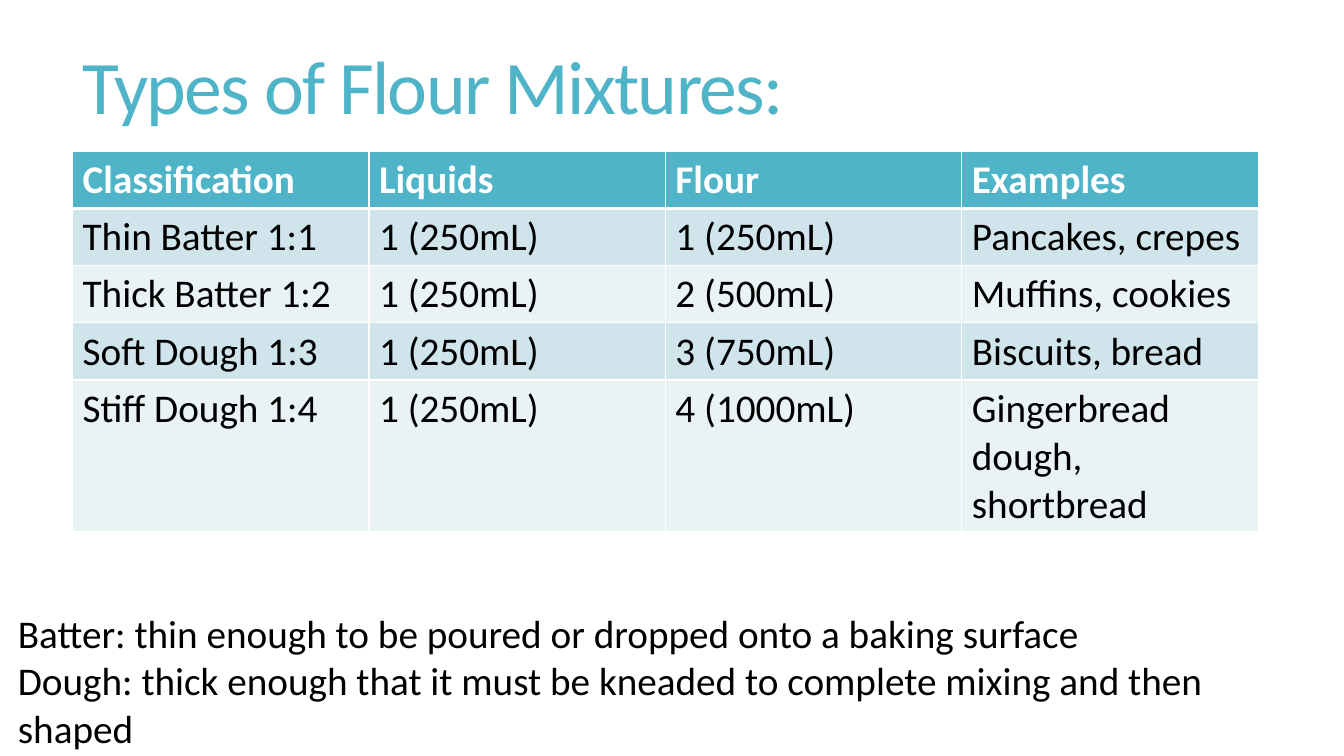
from dataclasses import dataclass

from lxml.etree import SubElement
from pptx import Presentation
from pptx.dml.color import RGBColor as Rgb
from pptx.enum.text import MSO_ANCHOR as Anchor
from pptx.oxml.ns import qn
from pptx.util import Inches, Pt


@dataclass(frozen=True)
class Theme:
    font: str = "Calibri"
    accent: str = "50B4C8"
    bands: tuple = ("D0E5EB", "E9F2F5")
    ink: str = "000000"
    paper: str = "FFFFFF"
    title_size: int = 54
    body_size: int = 28
    rule: int = 1
    header_rule: int = 3


THEME = Theme()
WIDTH, HEIGHT = Inches(13.33), Inches(7.5)

HEADING = "Types of Flour Mixtures:"
MIXTURES = [
    ("Classification", "Liquids", "Flour", "Examples"),
    ("Thin Batter 1:1", "1 (250mL)", "1 (250mL)", "Pancakes, crepes"),
    ("Thick Batter 1:2", "1 (250mL)", "2 (500mL)", "Muffins, cookies"),
    ("Soft Dough 1:3", "1 (250mL)", "3 (750mL)", "Biscuits, bread"),
    ("Stiff Dough 1:4", "1 (250mL)", "4 (1000mL)", "Gingerbread dough, shortbread"),
]
DEFINITIONS = [
    "Batter: thin enough to be poured or dropped onto a baking surface",
    "Dough: thick enough that it must be kneaded to complete mixing and then shaped",
]


def write(paragraph, words, size, color, bold=False):
    run = paragraph.add_run()
    run.text = words
    formats = {"name": THEME.font, "size": Pt(size), "bold": bold}
    for key, value in formats.items():
        setattr(run.font, key, value)
    run.font.color.rgb = Rgb.from_string(color)
    return run


def add_frame(slide, box, anchor):
    frame = slide.shapes.add_textbox(*box).text_frame
    for key, value in {"word_wrap": True, "vertical_anchor": anchor}.items():
        setattr(frame, key, value)
    return frame


def add_heading(slide, box):
    paragraph = add_frame(slide, box, Anchor.MIDDLE).paragraphs[0]
    paragraph.line_spacing = 0.85
    run = write(paragraph, HEADING, THEME.title_size, THEME.accent)
    run.font._element.set("spc", "-120")


def fill_cell(cell, color):
    cell.fill.solid()
    cell.fill.fore_color.rgb = Rgb.from_string(color)


def rule_cell(cell, widths):
    properties = cell._tc.get_or_add_tcPr()
    for position, (side, width) in enumerate(widths.items()):
        line = properties.makeelement(qn(f"a:{side}"), {"w": str(Pt(width))})
        properties.insert(position, line)
        paint = SubElement(line, qn("a:solidFill"))
        SubElement(paint, qn("a:srgbClr"), val=THEME.paper)


def add_mixtures(slide, box):
    left, top, width, height = box
    columns = len(MIXTURES[0])
    holder = slide.shapes.add_table(len(MIXTURES), columns, *box)
    table = holder.table
    for column in table.columns:
        column.width = width // columns
    for row in table.rows:
        row.height = int(height * 0.11)
    holder.height = height
    for r, mixture in enumerate(MIXTURES):
        header = r == 0
        background = THEME.accent if header else THEME.bands[(r - 1) % 2]
        ink = THEME.paper if header else THEME.ink
        widths = {
            "lnL": THEME.rule,
            "lnR": THEME.rule,
            "lnT": THEME.header_rule if r == 1 else THEME.rule,
            "lnB": THEME.header_rule if header else THEME.rule,
        }
        for c, words in enumerate(mixture):
            cell = table.cell(r, c)
            fill_cell(cell, background)
            rule_cell(cell, widths)
            write(cell.text_frame.paragraphs[0], words, THEME.body_size, ink, header)


def add_definitions(slide, box):
    frame = add_frame(slide, box, Anchor.TOP)
    for i, definition in enumerate(DEFINITIONS):
        paragraph = frame.add_paragraph() if i else frame.paragraphs[0]
        write(paragraph, definition, THEME.body_size, THEME.ink)


def main():
    deck = Presentation()
    deck.slide_width, deck.slide_height = WIDTH, HEIGHT
    slide = deck.slides.add_slide(deck.slide_layouts[6])
    margin, content = Inches(0.72), Inches(11.76)
    add_heading(slide, (margin, 0, content, Inches(1.81)))
    add_mixtures(slide, (margin, HEIGHT // 5, content, Inches(3.77)))
    add_definitions(slide, (Inches(0.08), HEIGHT * 4 // 5, Inches(13.17), Inches(1.04)))
    deck.save("out.pptx")


if __name__ == "__main__":
    main()
